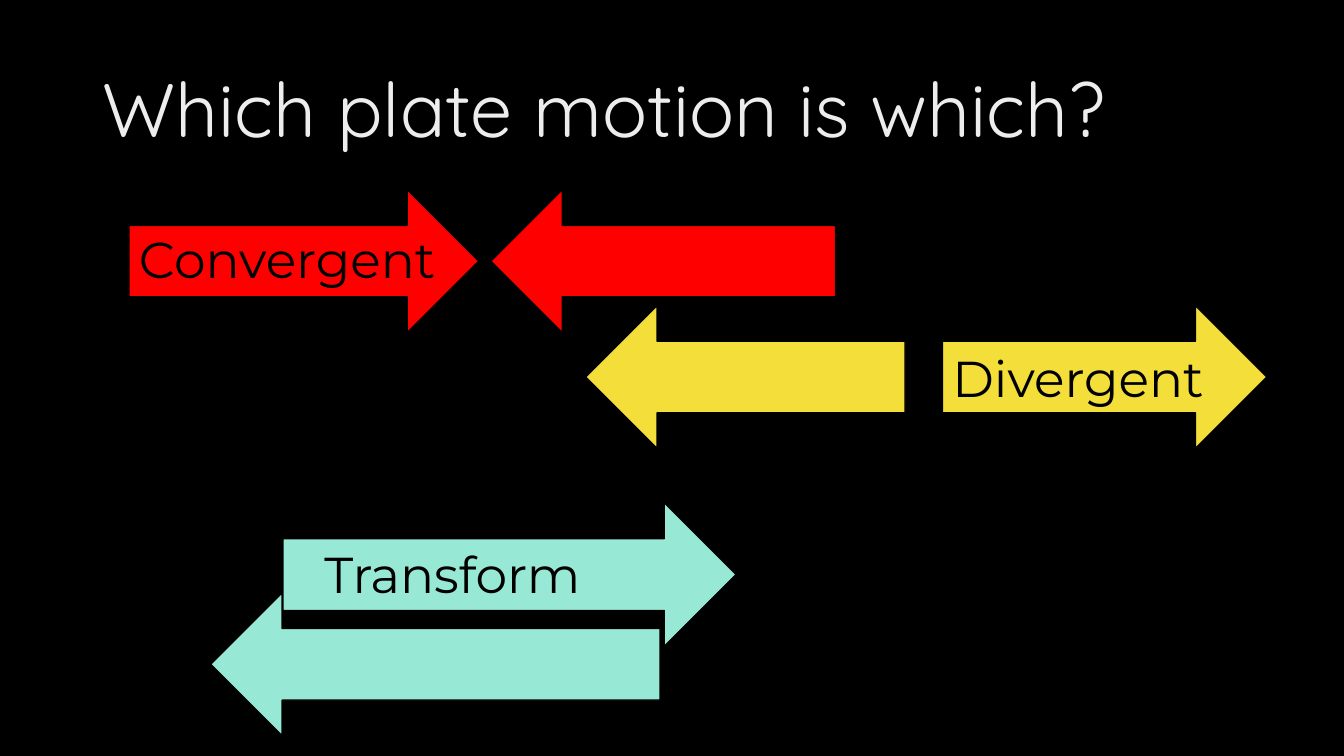
from pptx import Presentation
from pptx.dml.color import RGBColor
from pptx.enum import shapes, text
from pptx.util import Pt

# Content: lengths in points
TITLE = "Which plate motion is which?"
ARROW_HEIGHT = 102.2
LABEL_HEIGHT = 51.1
# label, label (left, top, width), fill, arrows (direction, left, top, width, line)
MOTIONS = [
    ("Convergent", (92.2, 159.1, 241.9), "FF0000",
     [("right", 92.2, 135.4, 249.8, 1), ("left", 350.6, 135.4, 246.2, 1)]),
    ("Divergent", (673.2, 244.1, 206.6), "F4DE3A",
     [("right", 673.2, 218.2, 231.8, 1), ("left", 418.3, 218.2, 228.2, 1)]),
    ("Transform", (224.6, 384.5, 218.9), "97E9D5",
     [("right", 202.3, 359.3, 323.3, 0.75), ("left", 150.5, 423.4, 321.1, 1)]),
]
ARROWS = {"right": shapes.MSO_SHAPE.RIGHT_ARROW,
          "left": shapes.MSO_SHAPE.LEFT_ARROW}


def paint(fill, colour):
    fill.solid()
    fill.fore_color.rgb = RGBColor.from_string(colour)


def add_text(page, words, left, top, width, height, *, font, size, colour,
             wrap=False, anchor=text.MSO_ANCHOR.TOP, spacing=1.0):
    box = page.shapes.add_textbox(Pt(left), Pt(top), Pt(width), Pt(height))
    frame = box.text_frame
    frame.word_wrap = wrap
    frame.vertical_anchor = anchor
    para = frame.paragraphs[0]
    para.line_spacing = spacing
    span = para.add_run()
    span.text = words
    span.font.name = font
    span.font.size = Pt(size)
    paint(span.font.fill, colour)


def add_arrow(group, direction, left, top, width, line, colour):
    arrow = group.shapes.add_shape(ARROWS[direction], Pt(left), Pt(top),
                                   Pt(width), Pt(ARROW_HEIGHT))
    arrow.shadow.inherit = False
    paint(arrow.fill, colour)
    paint(arrow.line.fill, "000000")
    arrow.line.width = Pt(line)


def main():
    deck = Presentation()
    deck.slide_width, deck.slide_height = Pt(960), Pt(540)
    page = deck.slides.add_slide(deck.slide_layouts[6])
    paint(page.background.fill, "000000")

    # Title
    add_text(page, TITLE, 66.2, 28.8, 828, 104.4, font="Quicksand", size=54,
             colour="EDEDED", wrap=True, anchor=text.MSO_ANCHOR.MIDDLE,
             spacing=0.9)

    # Arrow pairs, one group per motion
    for _, _, colour, arrows in MOTIONS:
        group = page.shapes.add_group_shape()
        for arrow in arrows:
            add_arrow(group, *arrow, colour)

    # Labels on top of the arrows
    for label, place, _, _ in MOTIONS:
        add_text(page, label, *place, LABEL_HEIGHT, font="Montserrat",
                 size=36, colour="000000")

    deck.save("out.pptx")


if __name__ == "__main__":
    main()
